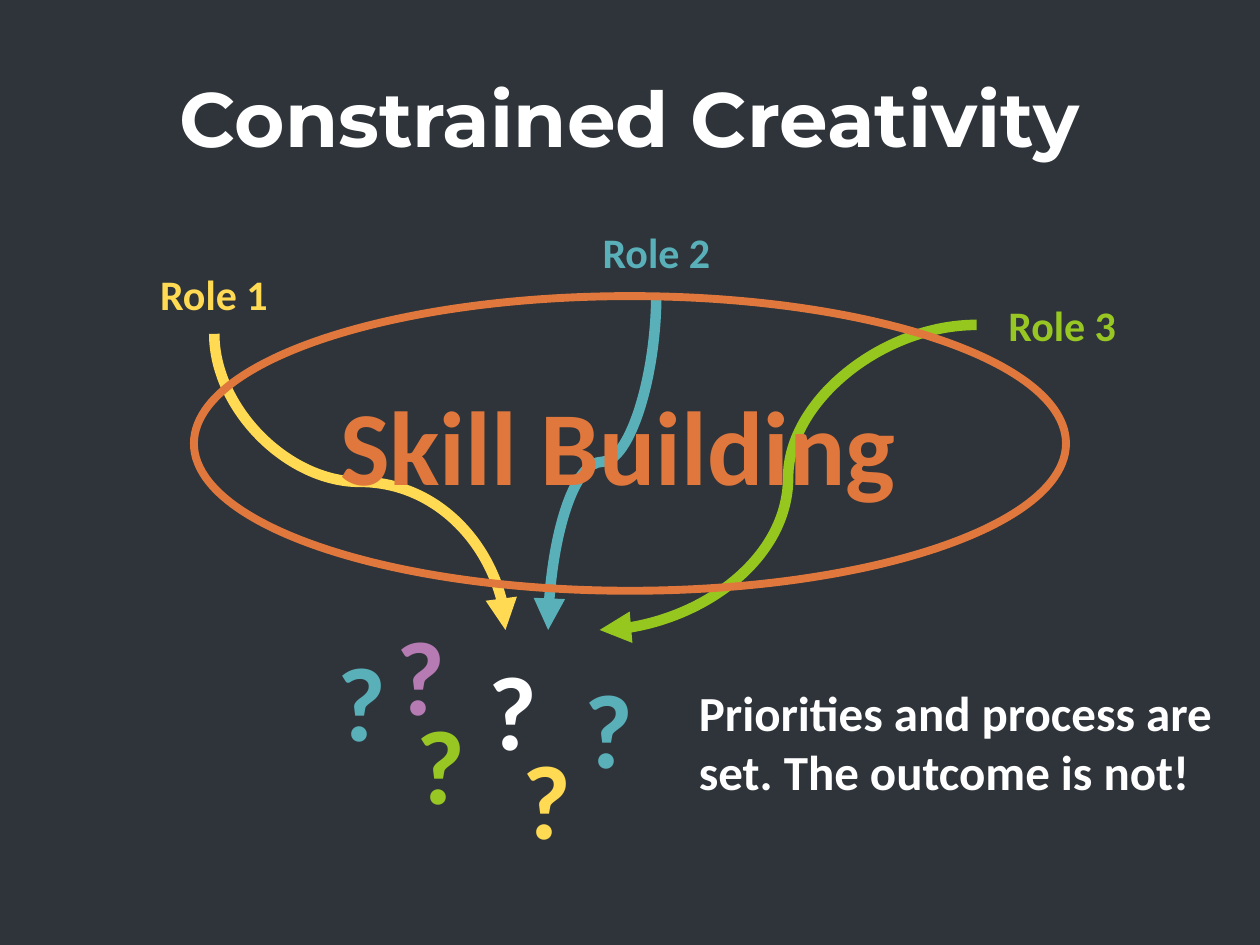
from lxml.etree import SubElement
from pptx import Presentation
from pptx.dml.color import RGBColor
from pptx.enum.shapes import MSO_CONNECTOR as Link, MSO_SHAPE as Shape
from pptx.enum.text import MSO_ANCHOR as Anchor, MSO_AUTO_SIZE as Auto, PP_ALIGN as Align
from pptx.oxml import parse_xml
from pptx.oxml.ns import nsdecls, qn
from pptx.util import Cm, Pt

DARK = RGBColor(0x2E, 0x34, 0x3A)
WHITE = RGBColor(0xFF, 0xFF, 0xFF)
YELLOW = RGBColor(0xFF, 0xDA, 0x52)
TEAL = RGBColor(0x59, 0xB0, 0xB9)
GREEN = RGBColor(0x98, 0xC7, 0x23)
LEAF = RGBColor(0x96, 0xC7, 0x1E)
PURPLE = RGBColor(0xB7, 0x7B, 0xB4)
ORANGE = RGBColor(0xE0, 0x77, 0x3C)

ROLES = [("Role 1", 1.75, 5.28, YELLOW),
         ("Role 2", 10.67, 4.45, TEAL),
         ("Role 3", 18.85, 5.92, GREEN)]
MARKS = [(6.55, 12.7, TEAL), (7.75, 12.19, PURPLE), (8.15, 13.97, GREEN),
         (9.6, 12.88, WHITE), (10.29, 14.68, YELLOW), (11.53, 13.26, TEAL)]


def set_text(shape, text, size, color, align=Align.LEFT, font="Calibri"):
    frame = shape.text_frame
    frame.word_wrap = True
    frame.text = text
    para = frame.paragraphs[0]
    para.alignment = align
    face = para.runs[0].font
    face.name, face.size, face.bold = font, Pt(size), True
    face.color.rgb = color
    return frame


def add_label(slide, text, box, size, color, align=Align.LEFT):
    label = slide.shapes.add_textbox(*map(Cm, box))
    set_text(label, text, size, color, align).auto_size = Auto.SHAPE_TO_FIT_TEXT


def add_curve(slide, start, end, color):
    curve = slide.shapes.add_connector(Link.CURVE, *map(Cm, start + end))
    curve.line.color.rgb = color
    curve.line.width = Pt(6)
    SubElement(curve.line._get_or_add_ln(), qn("a:tailEnd"), type="triangle")
    SubElement(curve._element.spPr, qn("a:effectLst"))
    return curve


def add_drop(slide, start, end, color):
    """Add a curve that leaves and arrives vertically: a level one, turned."""
    (x1, y1), (x2, y2) = start, end
    mid_x, mid_y = (x1 + x2) / 2, (y1 + y2) / 2
    half_w, half_h = (y2 - y1) / 2, abs(x2 - x1) / 2
    side, turn = (1, 270) if x2 > x1 else (-1, 90)
    curve = add_curve(slide, (mid_x + side * half_w, mid_y - half_h),
                      (mid_x - side * half_w, mid_y + half_h), color)
    curve._element.spPr.find(qn("a:xfrm")).set("rot", str(turn * 60000))


def add_oval(slide, text, box):
    oval = slide.shapes.add_shape(Shape.OVAL, *map(Cm, box))
    oval.shadow.inherit = False
    oval.fill.background()
    oval.line.color.rgb = ORANGE
    oval.line.width = Pt(4.5)
    frame = set_text(oval, text, 60, ORANGE, Align.CENTER)
    frame.vertical_anchor = Anchor.MIDDLE
    # Thin dark outline around the letters
    edge = parse_xml(f'<a:ln {nsdecls("a")} w="12700"><a:solidFill>'
                     f'<a:srgbClr val="{DARK}"/></a:solidFill></a:ln>')
    frame.paragraphs[0].runs[0].font._element.insert(0, edge)


def add_title(slide, text, box):
    title = slide.shapes.add_textbox(*map(Cm, box))
    frame = set_text(title, text, 44, WHITE, Align.CENTER, "Montserrat")
    frame.vertical_anchor = Anchor.MIDDLE


def main():
    deck = Presentation()
    deck.slide_width, deck.slide_height = Cm(25.4), Cm(19.05)
    slide = deck.slides.add_slide(deck.slide_layouts[6])
    slide.background.fill.solid()
    slide.background.fill.fore_color.rgb = DARK

    # Roles and the paths they take
    for text, x, y, color in ROLES:
        add_label(slide, text, (x, y, 5.13, 1.27), 24, color, Align.CENTER)
    add_drop(slide, (4.32, 6.73), (10.19, 12.7), YELLOW)
    add_curve(slide, (19.69, 6.55), (12.09, 12.7), LEAF)
    add_drop(slide, (13.23, 5.92), (11.05, 12.7), TEAL)

    # Open outcomes
    for x, y, color in MARKS:
        add_label(slide, "?", (x, y, 2.34, 2.82), 60, color)
    add_label(slide, "Priorities and process are set. The outcome is not!",
              (13.84, 13.64, 10.92, 2.64), 28, WHITE)

    # Shared ground and title
    add_oval(slide, "Skill Building ", (3.91, 5.97, 17.58, 5.94))
    add_title(slide, "Constrained Creativity", (1.27, 0.76, 22.86, 3.18))
    deck.save("out.pptx")


if __name__ == "__main__":
    main()
